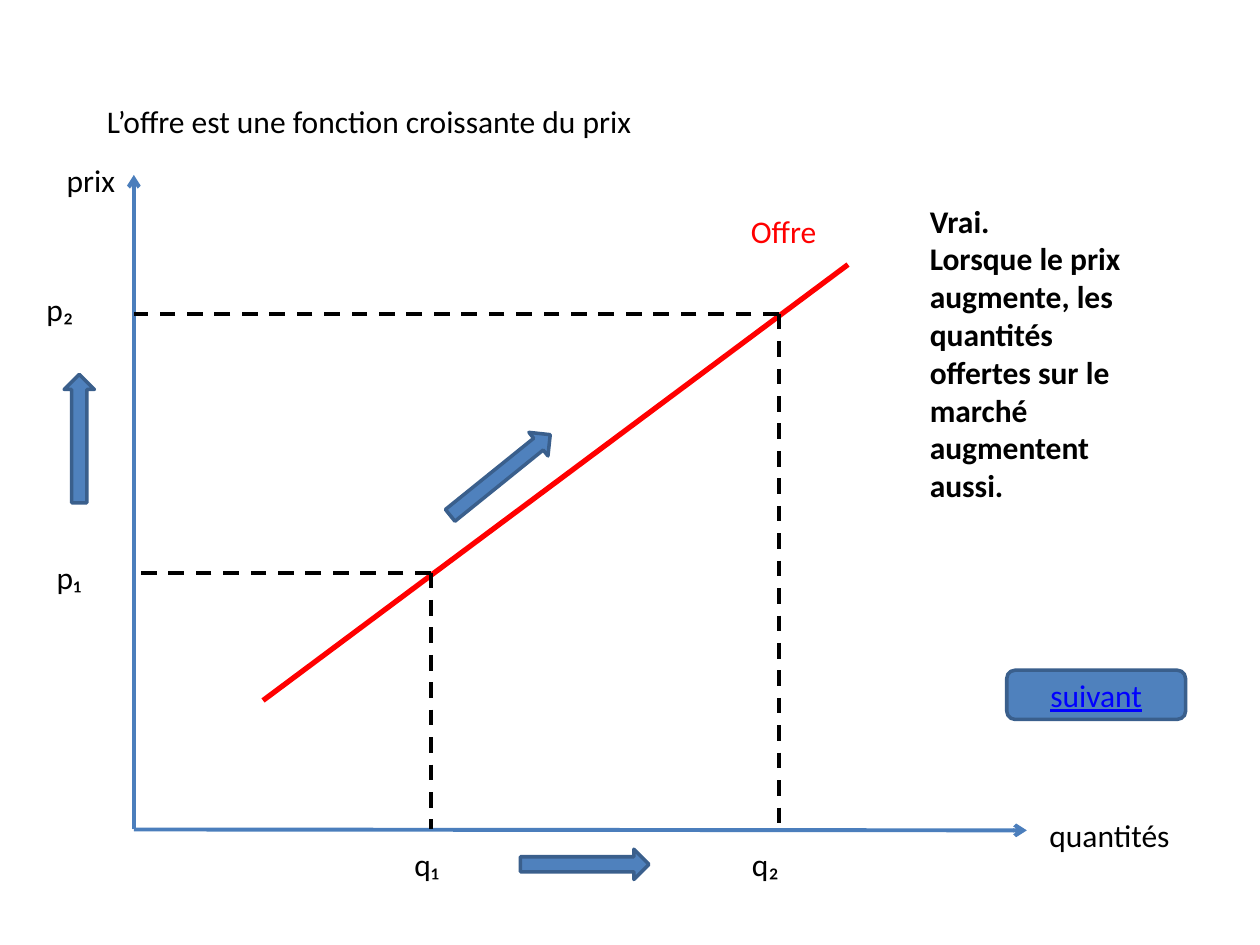
from lxml import etree
from pptx import Presentation
from pptx.dml.color import RGBColor
from pptx.enum.dml import MSO_LINE
from pptx.enum.shapes import MSO_CONNECTOR, MSO_SHAPE
from pptx.enum.text import MSO_ANCHOR, MSO_AUTO_SIZE, PP_ALIGN
from pptx.oxml.ns import qn
from pptx.util import Pt

BLACK, RED, LINK = "000000", "FF0000", "0000FF"
AXIS, FILL, BORDER = "4B7EBC", "4F81BD", "3A5F8C"


def color(value):
    return RGBColor.from_string(value)


class SlideBuilder:
    font = "Calibri"
    size = 18

    def __init__(self, slide):
        self.slide = slide

    def add_run(self, paragraph, text, ink, bold=False, underline=False):
        run = paragraph.add_run()
        run.text = text
        run.font.name, run.font.size = self.font, Pt(self.size)
        run.font.color.rgb = color(ink)
        if bold:
            run.font.bold = True
        if underline:
            run.font.underline = True

    def text(self, left, top, width, lines, height=29.08, ink=BLACK, bold=False):
        box = self.slide.shapes.add_textbox(Pt(left), Pt(top), Pt(width), Pt(height))
        frame = box.text_frame
        frame.word_wrap = True
        frame.auto_size = MSO_AUTO_SIZE.SHAPE_TO_FIT_TEXT
        for index, line in enumerate(lines):
            paragraph = frame.add_paragraph() if index else frame.paragraphs[0]
            self.add_run(paragraph, line, ink, bold)

    def line(self, start, end, ink, width=2.25, dashed=False, arrow=False):
        connector = self.slide.shapes.add_connector(
            MSO_CONNECTOR.STRAIGHT, *map(Pt, start + end))
        connector.line.color.rgb = color(ink)
        connector.line.width = Pt(width)
        if dashed:
            connector.line.dash_style = MSO_LINE.DASH
        if arrow:
            etree.SubElement(connector.line._get_or_add_ln(), qn("a:tailEnd"), type="arrow")
        etree.SubElement(connector._element.spPr, qn("a:effectLst"))

    def shape(self, kind, left, top, width, height, rotation=0):
        shape = self.slide.shapes.add_shape(kind, Pt(left), Pt(top), Pt(width), Pt(height))
        shape.rotation = rotation
        shape.shadow.inherit = False
        shape.fill.solid()
        shape.fill.fore_color.rgb = color(FILL)
        shape.line.color.rgb = color(BORDER)
        shape.line.width = Pt(2)
        return shape

    def block_arrow(self, left, top, rotation=0):
        self.shape(MSO_SHAPE.RIGHT_ARROW, left, top, 73.44, 17.28, rotation)

    def button(self, left, top, width, height, label):
        frame = self.shape(MSO_SHAPE.ROUNDED_RECTANGLE, left, top, width, height).text_frame
        frame.vertical_anchor = MSO_ANCHOR.MIDDLE
        frame.paragraphs[0].alignment = PP_ALIGN.CENTER
        self.add_run(frame.paragraphs[0], label, LINK, underline=True)


def main():
    presentation = Presentation()
    presentation.slide_width, presentation.slide_height = Pt(720), Pt(540)
    builder = SlideBuilder(presentation.slides.add_slide(presentation.slide_layouts[6]))

    # Title
    builder.text(54, 54.7, 527, ["L’offre est une fonction croissante du prix"])

    # Axes
    origin_x, origin_y = 76.5, 474
    builder.line((origin_x, origin_y), (origin_x, 100), AXIS, arrow=True)
    builder.line((origin_x, origin_y), (586.8, 474.5), AXIS, arrow=True)

    # Supply curve
    builder.line((150.3, 400.3), (484.6, 151.2), RED, width=3)
    builder.text(422, 117.4, 90.7, ["Offre"], ink=RED)

    # Dashed guides from each point on the curve to both axes
    for x, y in ((445, 179.3), (246.2, 327.2)):
        builder.line((x, y), (x, origin_y), BLACK, dashed=True)
        builder.line((x, y), (origin_x, y), BLACK, dashed=True)

    # Axis and guide labels
    for left, top, width, label in (
        (19.4, 162, 45.4, "p₂"),
        (25.2, 315.4, 39.6, "p₁"),
        (229.7, 479.5, 51, "q₁"),
        (422.6, 479.5, 51, "q₂"),
        (31, 88.6, 73.4, "prix"),
        (592.6, 463, 90.7, "quantités"),
    ):
        builder.text(left, top, width, [label])

    # Arrows showing the rise in price, quantity and supply
    builder.block_arrow(8.6, 242, 270)
    builder.block_arrow(297.4, 485.3)
    builder.block_arrow(249.1, 262.8, 321.1)

    # Answer and navigation button
    builder.text(524.2, 111.6, 136.1, [
        "Vrai.",
        "Lorsque le prix augmente, les quantités offertes sur le marché augmentent aussi.",
    ], height=181.4, bold=True)
    builder.button(575.3, 383, 102.2, 28.1, "suivant")

    presentation.save("out.pptx")


if __name__ == "__main__":
    main()
